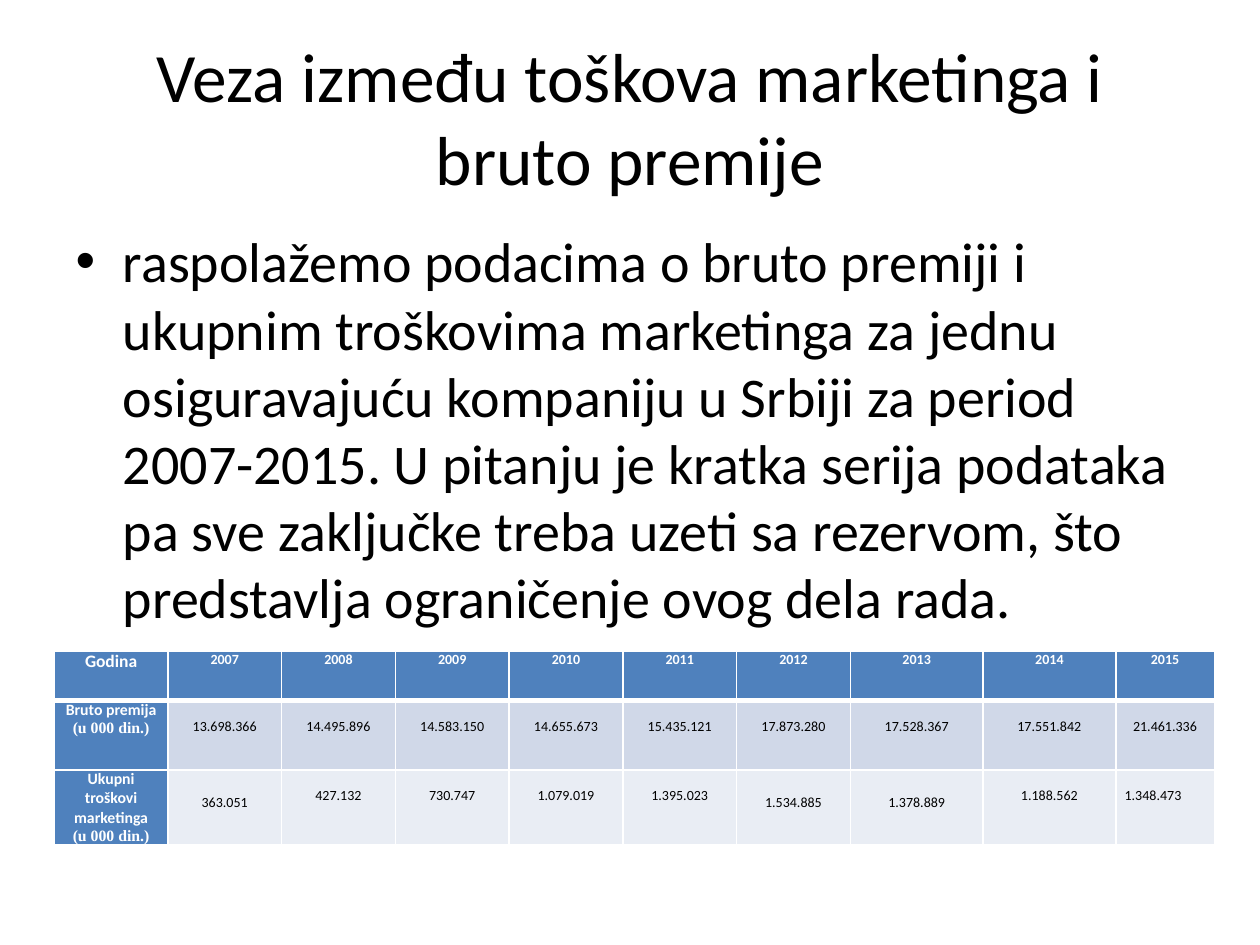
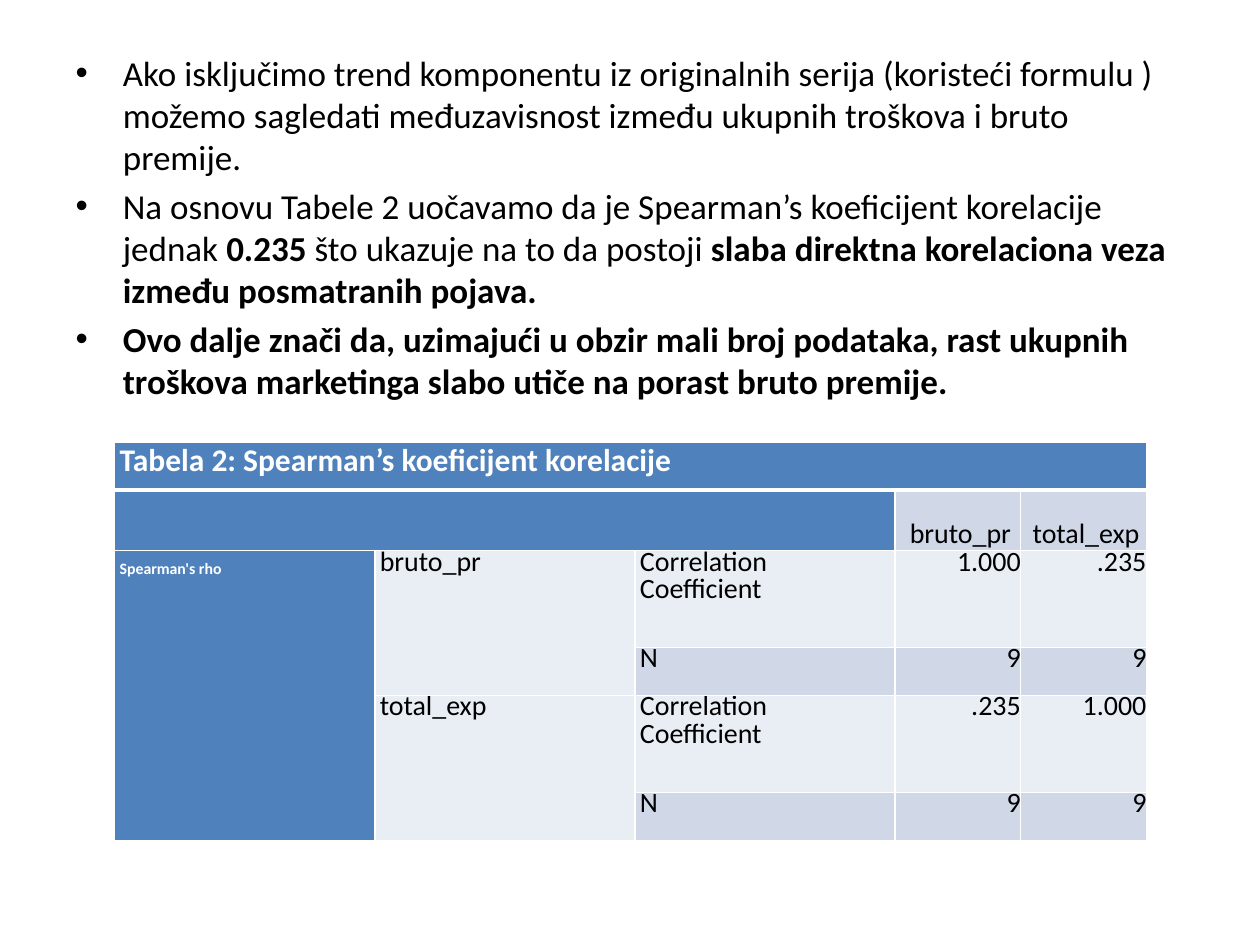
import pptx
import pptx.dml.color
import pptx.enum.text
import pptx.oxml
import pptx.oxml.ns
import pptx.util
from dataclasses import dataclass

Inches = pptx.util.Inches
Pt = pptx.util.Pt
LEFT, CENTER, RIGHT = (pptx.enum.text.PP_ALIGN.LEFT, pptx.enum.text.PP_ALIGN.CENTER,
                       pptx.enum.text.PP_ALIGN.RIGHT)
TOP, MIDDLE, BOTTOM = (pptx.enum.text.MSO_ANCHOR.TOP, pptx.enum.text.MSO_ANCHOR.MIDDLE,
                       pptx.enum.text.MSO_ANCHOR.BOTTOM)


@dataclass(frozen=True)
class Theme:
    font: str = "Calibri"
    unit_font: str = "Times New Roman"
    text: str = "000000"
    white: str = "FFFFFF"
    header: str = "4F81BD"
    dark_band: str = "D0D8E8"
    light_band: str = "E9EDF4"
    title_size: float = 39.6
    body_size: float = 32
    small_body_size: float = 20
    caption_size: float = 18
    correlation_size: float = 16
    corner_size: float = 10
    label_size: float = 9
    number_size: float = 8


THEME = Theme()

# Content: costs and premium by year
TITLE = "Veza između toškova marketinga i bruto premije"
INTRODUCTION = [
    "raspolažemo podacima o bruto premiji i ukupnim troškovima marketinga za jednu "
    "osiguravajuću kompaniju u Srbiji za period 2007-2015. U pitanju je kratka serija "
    "podataka pa sve zaključke treba uzeti sa rezervom, što predstavlja ograničenje "
    "ovog dela rada.",
]
UNIT = [("(u 000 din.)", {"font": THEME.unit_font})]
YEARS = [str(year) for year in range(2007, 2016)]
PREMIUMS = ["13.698.366", "14.495.896", "14.583.150", "14.655.673", "15.435.121",
            "17.873.280", "17.528.367", "17.551.842", "21.461.336"]
COSTS = ["363.051", "427.132", "730.747", "1.079.019", "1.395.023",
         "1.534.885", "1.378.889", "1.188.562", "1.348.473"]
LOWERED_YEARS = {"2007", "2012", "2013"}
YEAR_TABLE = {"at": (0.43, 5.17, 9.21), "columns": [0.9] * 7 + [1.05] * 2 + [0.78],
              "rows": [0.39, 0.55, 0.59]}

# Content: rank correlation
BOLD = {"bold": True}
CONCLUSIONS = [
    "Ako isključimo trend komponentu iz originalnih serija (koristeći formulu ) možemo "
    "sagledati međuzavisnost između ukupnih troškova i bruto premije.",
    ["Na osnovu Tabele 2 uočavamo da je Spearman’s koeficijent korelacije jednak ",
     ("0.235 ", BOLD), "što ukazuje na to da postoji ",
     ("slaba direktna korelaciona veza između posmatranih pojava.", BOLD)],
    [("Ovo dalje znači da, uzimajući u obzir mali broj podataka, rast ukupnih troškova "
      "marketinga slabo utiče na porast bruto premije.", BOLD)],
]
CAPTION = "Tabela 2: Spearman’s koeficijent korelacije"
METHOD = "Spearman's rho"
VARIABLES = ["bruto_pr", "total_exp"]
STATISTICS = [
    ("Correlation Coefficient", "1.000", ".235"),
    ("N", "9", "9"),
    ("Correlation Coefficient", ".235", "1.000"),
    ("N", "9", "9"),
]
CORRELATION_TABLE = {"at": (0.91, 3.51, 8.19), "columns": [2.07] * 3 + [1] * 2,
                     "rows": [0.38, 0.48] + [0.77, 0.38] * 2}


def write_text(text_frame, paragraphs, size, color=THEME.text, bold=False, font=THEME.font,
               align=LEFT, indent=None, line_spacing=None):
    """Fill a frame; a paragraph is a string or a list of strings and (text, format) runs."""
    for index, content in enumerate(paragraphs):
        paragraph = text_frame.paragraphs[0] if index == 0 else text_frame.add_paragraph()
        paragraph.alignment = align
        if line_spacing:
            paragraph.line_spacing = Pt(line_spacing)
        if indent is not None:
            properties = paragraph._p.get_or_add_pPr()
            properties.set("marL", str(Inches(indent)))
            properties.set("indent", "0")
        for part in [content] if isinstance(content, str) else content:
            text, changes = (part, {}) if isinstance(part, str) else part
            run = paragraph.add_run()
            run.text = text
            run.font.size = Pt(size)
            run.font.name = changes.get("font", font)
            run.font.bold = changes.get("bold", bold)
            run.font.color.rgb = pptx.dml.color.RGBColor.from_string(color)


def place(shape, left, top, width, height):
    shape.left, shape.top = Inches(left), Inches(top)
    shape.width, shape.height = Inches(width), Inches(height)


def add_slide(presentation, title, body, body_size, body_box):
    slide = presentation.slides.add_slide(presentation.slide_layouts[1])
    title_shape, body_shape = slide.placeholders
    if title:
        place(title_shape, 0.5, 0.3, 9, 1.25)
        title_shape.text_frame.vertical_anchor = MIDDLE
        write_text(title_shape.text_frame, [title], THEME.title_size, align=CENTER)
    else:
        title_shape.element.getparent().remove(title_shape.element)
    place(body_shape, *body_box)
    write_text(body_shape.text_frame, body, body_size)
    return slide


def add_grid(slide, at, columns, rows):
    left, top, width = at
    table = slide.shapes.add_table(len(rows), len(columns), Inches(left), Inches(top),
                                   Inches(width), Inches(sum(rows))).table
    for column, share in zip(table.columns, columns):
        column.width = Inches(width * share / sum(columns))
    for row, height in zip(table.rows, rows):
        row.height = Inches(height)
    return table


def style_cell(cell, fill, margins=(0, 0, 0, 0), anchor=TOP, heading=False):
    """White borders, thicker under and over a heading edge, then a solid fill."""
    (cell.margin_left, cell.margin_top,
     cell.margin_right, cell.margin_bottom) = map(Inches, margins)
    cell.vertical_anchor = anchor
    properties = cell._tc.get_or_add_tcPr()
    for side in "LRTB":
        width = Pt(3 if heading and side == "B" else 1)
        properties.append(pptx.oxml.parse_xml(
            f'<a:ln{side} {pptx.oxml.ns.nsdecls("a")} w="{width}"><a:solidFill>'
            f'<a:srgbClr val="{THEME.white}"/></a:solidFill></a:ln{side}>'))
    cell.fill.solid()
    cell.fill.fore_color.rgb = pptx.dml.color.RGBColor.from_string(fill)


def add_year_table(slide):
    table = add_grid(slide, **YEAR_TABLE)
    side, number_top, lowered_bottom = 0.07, 0.14, 0.27

    # Header row and header column
    headings = [(0, column, [year], THEME.number_size)
                for column, year in enumerate(YEARS, start=1)]
    headings += [(0, 0, ["Godina"], THEME.corner_size),
                 (1, 0, ["Bruto premija", UNIT], THEME.label_size),
                 (2, 0, ["Ukupni troškovi marketinga", UNIT], THEME.label_size)]
    for row, column, lines, size in headings:
        cell = table.cell(row, column)
        style_cell(cell, THEME.header, (side, 0, side, 0), heading=row == 0)
        write_text(cell.text_frame, lines, size, THEME.white, bold=True, align=CENTER)

    # Values
    bands = [(PREMIUMS, THEME.dark_band), (COSTS, THEME.light_band)]
    for row, (values, fill) in enumerate(bands, start=1):
        for column, (year, value) in enumerate(zip(YEARS, values), start=1):
            cell = table.cell(row, column)
            if values is COSTS and year in LOWERED_YEARS:
                style_cell(cell, fill, (side, 0, side, lowered_bottom), BOTTOM)
            else:
                style_cell(cell, fill, (side, number_top, side, 0))
            last_cost = values is COSTS and year == YEARS[-1]
            write_text(cell.text_frame, [value], THEME.number_size,
                       align=LEFT if last_cost else CENTER)


def add_correlation_table(slide):
    table = add_grid(slide, **CORRELATION_TABLE)
    spacing = {"indent": 0.04, "line_spacing": 16}
    light, dark = THEME.light_band, THEME.dark_band

    # Fills, borders and anchors
    for row in range(len(table.rows)):
        for column in range(len(table.columns)):
            band = dark if row in (1, 3, 5) and column > 1 else light
            is_header = row == 0 or column == 0 or (row == 1 and column < 3)
            style_cell(table.cell(row, column), THEME.header if is_header else band,
                       anchor={0: MIDDLE, 1: BOTTOM}.get(row, TOP), heading=row == 0)
    for first, last in [((0, 0), (0, 4)), ((1, 0), (1, 2)), ((2, 0), (5, 0)),
                        ((2, 1), (3, 1)), ((4, 1), (5, 1))]:
        table.cell(*first).merge(table.cell(*last))

    # Headings
    for row, text, size in [(0, CAPTION, THEME.caption_size), (2, METHOD, THEME.label_size)]:
        write_text(table.cell(row, 0).text_frame, [text], size, THEME.white, bold=True,
                   **spacing)

    # Variables and statistics
    entries = []
    for index, variable in enumerate(VARIABLES):
        entries += [(1, 3 + index, variable, CENTER), (2 + 2 * index, 1, variable, LEFT)]
    for row, values in enumerate(STATISTICS, start=2):
        for column, value in enumerate(values, start=2):
            entries.append((row, column, value, LEFT if column == 2 else RIGHT))
    for row, column, text, align in entries:
        write_text(table.cell(row, column).text_frame, [text], THEME.correlation_size,
                   align=align, **spacing)


def main():
    presentation = pptx.Presentation()
    presentation.slide_width, presentation.slide_height = Inches(10), Inches(7.5)
    add_year_table(add_slide(presentation, TITLE, INTRODUCTION, THEME.body_size,
                             (0.5, 1.75, 9, 4.95)))
    add_correlation_table(add_slide(presentation, None, CONCLUSIONS, THEME.small_body_size,
                                    (0.5, 0.36, 9, 6.34)))
    presentation.save("out.pptx")


if __name__ == "__main__":
    main()
